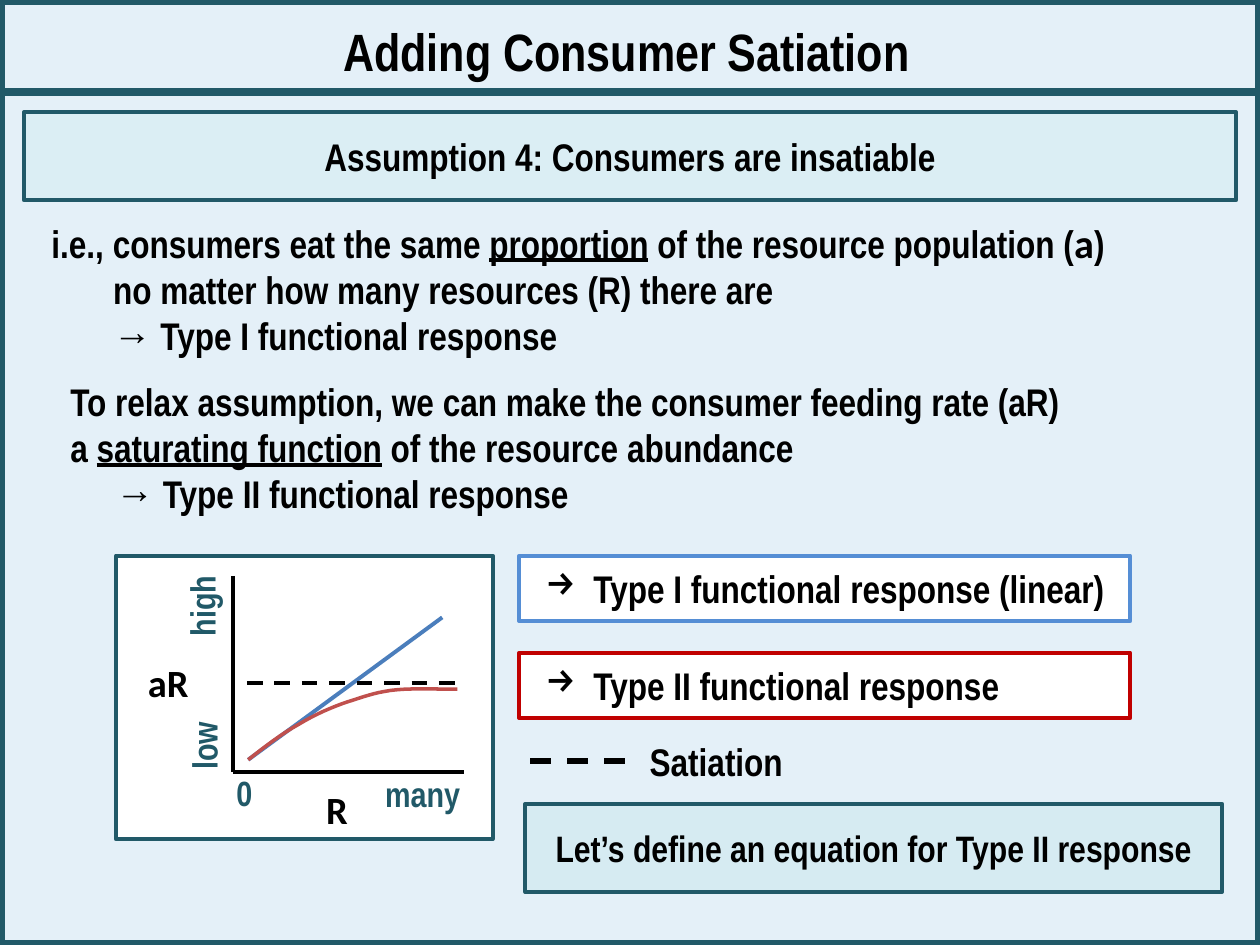
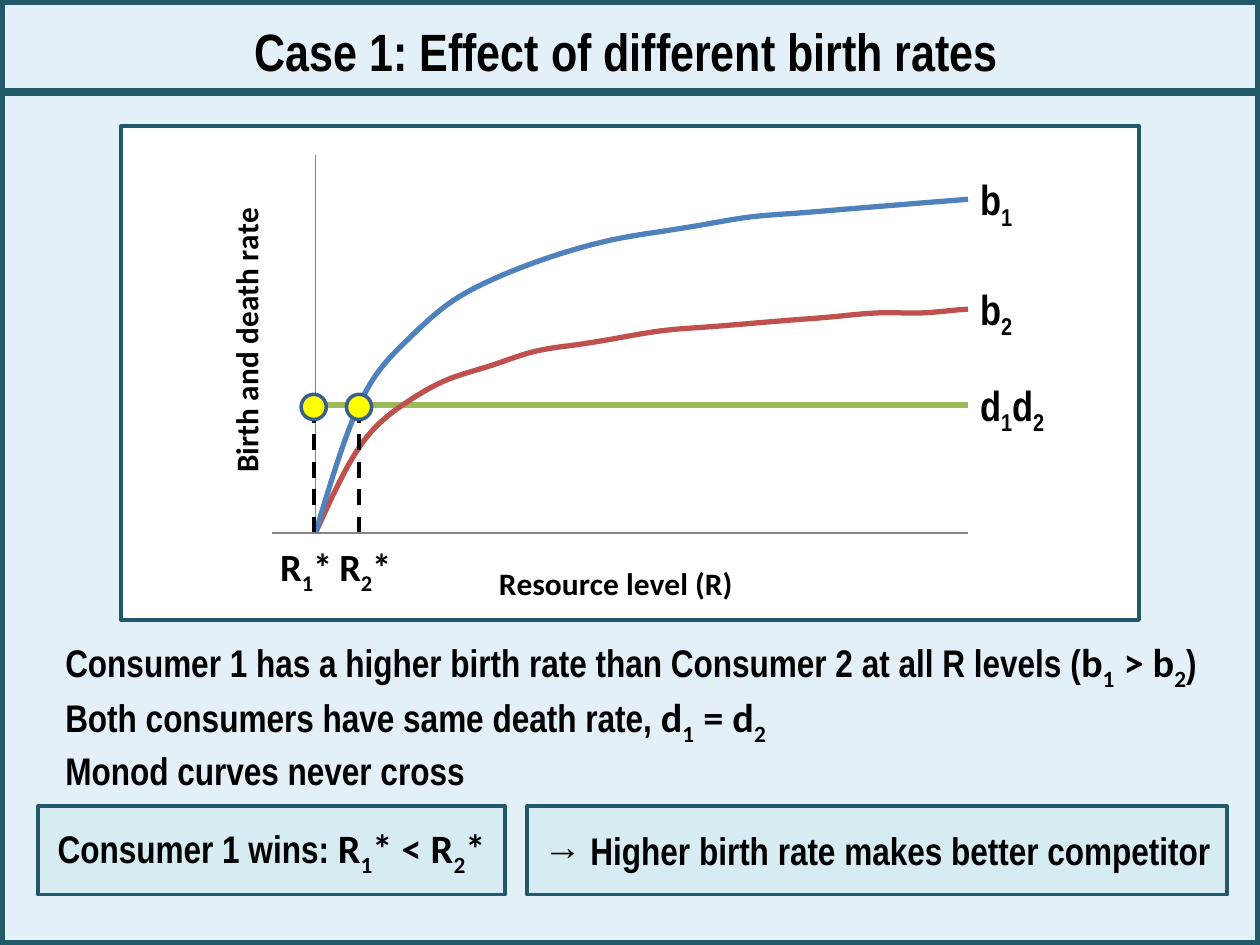
from itertools import groupby

from lxml import etree
from pptx import Presentation
from pptx import util as u
from pptx.chart import data
from pptx.dml import color
from pptx.enum import chart as charts
from pptx.enum import dml, shapes, text
from pptx.oxml import ns

COLORS = {
    "page": "E4F0F8",
    "teal": "215968",
    "pale": "DBEEF4",
    "callout": "D6EBF2",
    "white": "FFFFFF",
    "black": "000000",
    "linear": "4B7EBC",
    "type_one": "558ED5",
    "type_two": "C00000",
    "blue": "4F81BD",
    "red": "C0504D",
    "green": "9BBB59",
    "axis": "868686",
    "yellow": "FFFF00",
    "ring": "3A5F8C",
}
NARROW, CALIBRI = "Arial Narrow", "Calibri"
CENTER, LEFT = text.PP_ALIGN.CENTER, text.PP_ALIGN.LEFT

BIRTH_1 = [0, 36, 53, 64, 71, 76, 80, 83, 85, 87, 89, 90, 91, 92, 93, 94,
           95, 95, 96, 97, 97, 97, 98, 98, 98, 99, 99, 99, 100, 100, 100]
BIRTH_2 = [0, 24, 36, 43, 47, 51, 53, 55, 57, 58, 59, 60, 61, 62, 62, 63,
           63, 64, 64, 64, 65, 65, 65, 65, 66, 66, 66, 66, 66, 67, 67]
DEATH = [36] * 31

SATURATING_CURVE = [
    [(1.97, 6.03), (2.11, 5.92), (2.24, 5.82), (2.37, 5.75)],
    [(2.37, 5.75), (2.5, 5.67), (2.64, 5.61), (2.76, 5.57)],
    [(2.76, 5.57), (2.89, 5.53), (2.96, 5.5), (3.1, 5.48)],
    [(3.1, 5.48), (3.24, 5.46), (3.44, 5.47), (3.63, 5.47)],
]


def rgb(name):
    return color.RGBColor.from_string(COLORS[name])


def inches(*lengths):
    return [u.Inches(length) for length in lengths]


def symbol(letters, font=CALIBRI, size=23):
    return [("".join(part), {"font": font, "size": size, "sub": is_digit})
            for is_digit, part in groupby(letters, str.isdigit)]


def style_span(span, font=NARROW, size=22, ink="black", underline=False, sub=False):
    span.font.name = font
    span.font.size = u.Pt(size)
    span.font.bold = True
    span.font.color.rgb = rgb(ink)
    if underline:
        span.font.underline = True
    if sub:
        span._r.get_or_add_rPr().set("baseline", "-25000")


def write(frame, lines, align=LEFT, margins=None, bullet=None, **style):
    lines = [lines] if isinstance(lines, str) else lines
    for index, line in enumerate(lines):
        para = frame.add_paragraph() if index else frame.paragraphs[0]
        para.alignment = align
        spans = [(line, {})] if isinstance(line, str) else line
        for words, changes in spans:
            span = para.add_run()
            span.text = words
            style_span(span, **{**style, **changes})
        properties = para._p.get_or_add_pPr()
        if margins:
            properties.set("marL", str(u.Inches(margins[index])))
            properties.set("indent", "0")
        if bullet:
            properties.set("indent", str(-u.Inches(margins[index])))
            mark = etree.SubElement(properties, ns.qn("a:buChar"))
            mark.set("char", bullet)


def bezier(start, first, second, end, steps=8):
    for step in range(1, steps + 1):
        t = step / steps
        weights = ((1 - t) ** 3, 3 * t * (1 - t) ** 2, 3 * t ** 2 * (1 - t), t ** 3)
        yield [sum(w * p[axis] for w, p in zip(weights, (start, first, second, end)))
               for axis in (0, 1)]


def place(parent, **values):
    layout = parent.find(ns.qn("c:layout"))
    if layout is None:
        layout = etree.Element(ns.qn("c:layout"))
        parent.insert(len(parent.findall(ns.qn("c:tx"))), layout)
    manual = etree.SubElement(layout, ns.qn("c:manualLayout"))
    for name, value in values.items():
        etree.SubElement(manual, ns.qn(f"c:{name}")).set("val", str(value))


class Lecture:
    def __init__(self):
        self.deck = Presentation()
        self.deck.slide_width, self.deck.slide_height = inches(10, 7.5)
        self.layout = self.deck.slide_layouts[5]
        fill = self.layout.background.fill
        fill.solid()
        fill.fore_color.rgb = rgb("page")
        self.page = None

    def add_page(self, title):
        first = self.page is None
        self.page = self.deck.slides.add_slide(self.layout)
        if first:
            border = self.shape(0, 0, 10, 7.5, None, width=6)
            band = self.line((0.01, 0.73), (10, 0.73), "teal", 5)
            for part in (border, band):
                self.layout.shapes.element.append(part.element)
        box = self.page.shapes.title
        box.left, box.top, box.width, box.height = inches(0.74, 0.1, 8.47, 0.61)
        box.text_frame.auto_size = text.MSO_AUTO_SIZE.NONE
        box.text_frame.vertical_anchor = text.MSO_ANCHOR.MIDDLE
        write(box.text_frame, title, align=CENTER, size=30)

    def shape(self, left, top, width_in, height, fill, line="teal", width=2.25,
              kind=shapes.MSO_SHAPE.RECTANGLE):
        shape = self.page.shapes.add_shape(kind, *inches(left, top, width_in, height))
        self.outline(shape, line, width)
        if fill:
            shape.fill.solid()
            shape.fill.fore_color.rgb = rgb(fill)
        else:
            shape.fill.background()
        return shape

    def outline(self, shape, ink, width):
        shape.shadow.inherit = False
        shape.line.color.rgb = rgb(ink)
        shape.line.width = u.Pt(width)

    def panel(self, left, top, width, height, lines, fill="callout", line="teal", **style):
        panel = self.shape(left, top, width, height, fill, line)
        panel.text_frame.word_wrap = True
        panel.text_frame.vertical_anchor = text.MSO_ANCHOR.MIDDLE
        write(panel.text_frame, lines, **{"align": CENTER, **style})
        return panel

    def text(self, left, top, width, height, lines, rotation=0, **style):
        box = self.page.shapes.add_textbox(*inches(left, top, width, height))
        box.rotation = rotation
        box.text_frame.word_wrap = True
        write(box.text_frame, lines, **style)

    def line(self, start, end, ink="black", width=2.25, dashed=False):
        line = self.page.shapes.add_connector(
            shapes.MSO_CONNECTOR.STRAIGHT, *inches(*start, *end))
        line.line.color.rgb = rgb(ink)
        line.line.width = u.Pt(width)
        if dashed:
            line.line.dash_style = dml.MSO_LINE.DASH
        etree.SubElement(line.element.spPr, ns.qn("a:effectLst"))
        return line

    def curve(self, segments, ink, width):
        builder = self.page.shapes.build_freeform(*inches(*segments[0][0]))
        points = [inches(*point) for segment in segments for point in bezier(*segment)]
        builder.add_line_segments(points, close=False)
        curve = builder.convert_to_shape()
        curve.fill.background()
        self.outline(curve, ink, width)

    def axis(self, axis, title, low, high, rotation, x, y):
        axis.minimum_scale, axis.maximum_scale = low, high
        axis.has_major_gridlines = False
        axis.major_tick_mark = axis.minor_tick_mark = charts.XL_TICK_MARK.NONE
        axis.tick_label_position = charts.XL_TICK_LABEL_POSITION.NONE
        axis.format.line.color.rgb = rgb("axis")
        axis.format.line.width = u.Pt(0.75)
        frame = axis.axis_title.text_frame
        write(frame, title, align=CENTER, font=CALIBRI, size=18)
        body = frame._txBody.bodyPr
        body.set("rot", str(rotation * 60000))
        body.set("vert", "horz")
        place(axis.axis_title._element, xMode="edge", yMode="edge", x=x, y=y)

    def rates_chart(self, left, top, width, height, curves):
        values = data.XyChartData()
        for index, (rates, ink) in enumerate(curves, 1):
            series = values.add_series(f"Series {index}")
            for resource, rate in enumerate(rates):
                series.add_data_point(resource, rate)
        chart = self.page.shapes.add_chart(
            charts.XL_CHART_TYPE.XY_SCATTER_SMOOTH_NO_MARKERS,
            *inches(left, top, width, height), values).chart
        chart.has_title = chart.has_legend = False
        chart.font.name = CALIBRI
        chart.font.size = u.Pt(10)
        chart.font.color.rgb = rgb("black")
        plot = chart.plots[0]
        plot.vary_by_categories = False
        for series, (rates, ink) in zip(plot.series, curves):
            series.format.line.color.rgb = rgb(ink)
            series.format.line.width = u.Pt(3)
            series._element.get_or_add_smooth().val = True
        self.axis(chart.category_axis, "Resource level (R)", -1, 15, 0, 0.39, 0.89)
        self.axis(chart.value_axis, "Birth and death rate", 0, 106.5, -90, 0.06, 0.15)
        place(chart._chartSpace.chart.plotArea, layoutTarget="inner",
              xMode="edge", yMode="edge", x=0.124, y=0.045, w=0.837, h=0.797)


def satiation_page(lecture):
    lecture.add_page("Adding Consumer Satiation")
    lecture.panel(0.19, 0.89, 9.62, 0.7, "Assumption 4: Consumers are insatiable", fill="pale")
    lecture.text(0.31, 1.68, 9.39, 1.23, [
        [("i.e., consumers eat the same ", {}), ("proportion", {"underline": True}),
         (" of the resource population (", {}), *symbol("a"), (")", {})],
        "no matter how many resources (R) there are",
        "→ Type I functional response",
    ], margins=[0, 0.49, 0.49])
    lecture.text(0.46, 2.95, 8.96, 1.21, [
        "To relax assumption, we can make the consumer feeding rate (aR)",
        [("a ", {}), ("saturating function", {"underline": True}),
         (" of the resource abundance", {})],
        "→ Type II functional response",
    ], margins=[0, 0, 0.36])

    lecture.shape(0.92, 4.41, 2.99, 2.25, "white")
    for left, top, name in ((2.26, 6.19, "R"), (0.92, 5.18, "aR")):
        lecture.text(left, top, 0.83, 0.47, name, align=CENTER, font=CALIBRI)
    for left, top, width, name, rotation in (
            (1.33, 5.7, 0.58, "low", 270), (1.09, 4.59, 1.03, "high", 270),
            (1.65, 6.07, 0.58, "0", 0), (2.84, 6.08, 1.03, "many", 0)):
        lecture.text(left, top, width, 0.44, name, rotation, align=CENTER, size=20, ink="teal")
    origin = (1.85, 6.13)
    lecture.line((1.85, 4.57), origin)
    lecture.line((3.68, 6.13), origin)
    lecture.line((1.97, 6.03), (3.51, 4.9), "linear")
    lecture.line((1.96, 5.42), (3.66, 5.42), dashed=True)
    lecture.curve(SATURATING_CURVE, "red", 2)

    for top, name, line in ((4.41, "Type I functional response (linear)", "type_one"),
                            (5.18, "Type II functional response", "type_two")):
        panel = lecture.panel(4.12, top, 4.85, 0.52, name, fill="white", line=line,
                              align=LEFT, margins=[0.38], bullet="→")
        panel.text_frame.margin_left = u.Inches(0.21)
    lecture.line((4.21, 6.04), (5.05, 6.04), width=3, dashed=True)
    lecture.text(5.05, 5.81, 1.27, 0.47, "Satiation", align=CENTER)
    lecture.panel(4.17, 6.38, 5.53, 0.7, "Let’s define an equation for Type II response", size=21)


def birth_rates_page(lecture):
    lecture.add_page("Case 1: Effect of different birth rates")
    lecture.shape(0.96, 1, 8.08, 3.92, "white")
    for top, name in ((1.33, "b1"), (2.2, "b2"), (2.96, "d1d2")):
        lecture.text(7.68, top, 0.81, 0.5, [symbol(name, NARROW, 24)])
    lecture.rates_chart(1.34, 1.06, 6.6, 3.8,
                        [(BIRTH_1, "blue"), (BIRTH_2, "red"), (DEATH, "green")])
    for middle, label_left, name in ((2.85, 2.47, "R2*"), (2.49, 2, "R1*")):
        lecture.text(label_left, 4.26, 0.86, 0.49, [symbol(name, size=22)], align=CENTER)
        lecture.line((middle, 3.23), (middle, 4.25), dashed=True)
        lecture.shape(middle - 0.1, 3.13, 0.2, 0.2, "yellow", "ring", 2,
                      kind=shapes.MSO_SHAPE.OVAL)

    lecture.text(0.42, 5.01, 9.4, 1.25, [
        [("Consumer 1 has a higher birth rate than Consumer 2 at all R levels (", {}),
         *symbol("b1 > b2"), (")", {})],
        [("Both consumers have same death rate, ", {}), *symbol("d1 = d2")],
        "Monod curves never cross",
    ])
    lecture.panel(0.3, 6.4, 3.71, 0.7, [[("Consumer 1 wins: ", {}), *symbol("R1* < R2*")]])
    lecture.panel(4.18, 6.4, 5.56, 0.7, "→ Higher birth rate makes better competitor")


def main():
    lecture = Lecture()
    satiation_page(lecture)
    birth_rates_page(lecture)
    lecture.deck.save("out.pptx")


if __name__ == "__main__":
    main()
